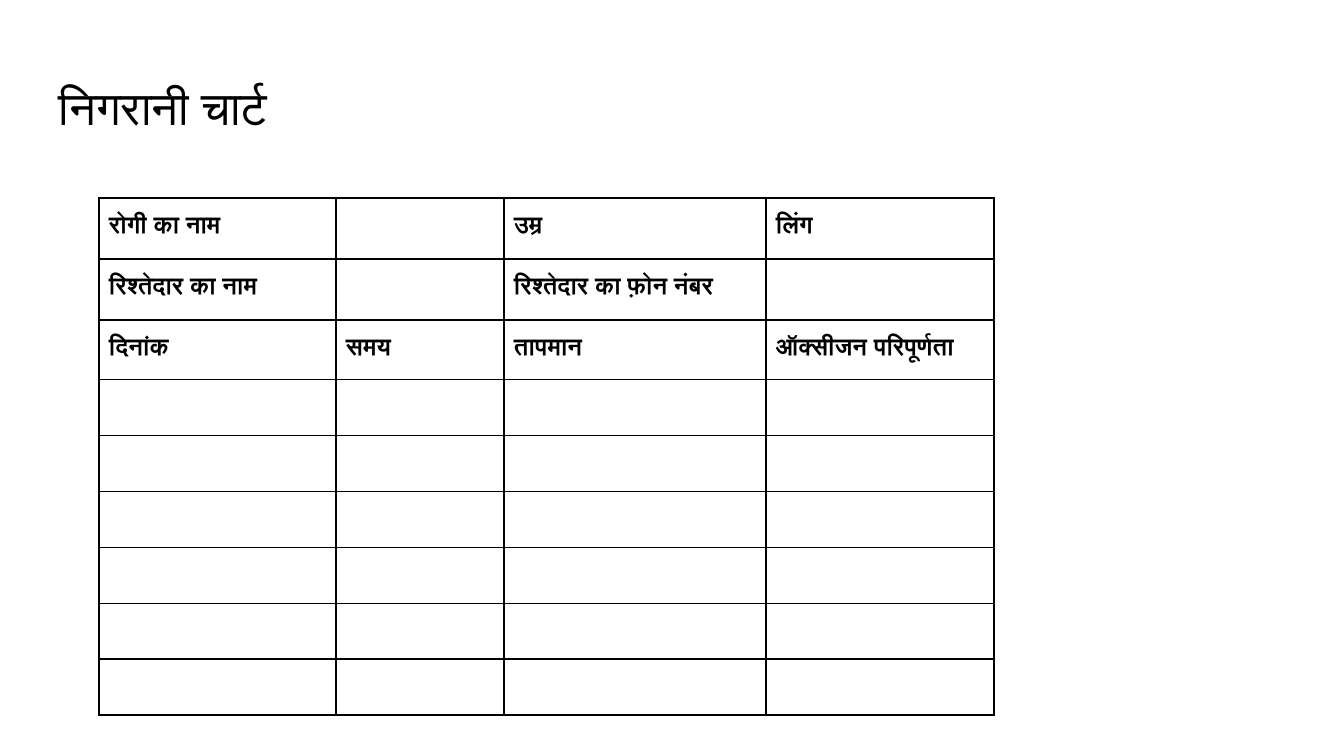
from dataclasses import dataclass

from lxml.etree import SubElement
from pptx import Presentation
from pptx.dml.color import RGBColor
from pptx.oxml.ns import qn
from pptx.util import Emu, Pt

EMU_PER_INCH, PX_PER_INCH = 914400, 134.4
BLACK = RGBColor(0x00, 0x00, 0x00)
BORDER_WIDTH = Pt(1)
SIDE_INSET, END_INSET = 10, 13


@dataclass(frozen=True)
class TextStyle:
    font: str
    size: float
    bold: bool = False
    line_spacing: float = 1.0


@dataclass(frozen=True)
class Grid:
    left: int
    top: int
    columns: tuple[int, ...]
    rows: tuple[int, ...]
    labels: tuple[tuple[str, ...], ...]


TITLE_STYLE = TextStyle("Arial", 25.2)
LABEL_STYLE = TextStyle("Calibri", 13, bold=True, line_spacing=1.15)
MONITORING_GRID = Grid(
    left=99,
    top=198,
    columns=(237, 168, 262, 228),
    rows=(61, 61, 55) + (56,) * 6,
    labels=(
        ("रोगी का नाम", "", "उम्र", "लिंग"),
        ("रिश्तेदार का नाम", "", "रिश्तेदार का फ़ोन नंबर", ""),
        ("दिनांक", "समय", "तापमान", "ऑक्सीजन परिपूर्णता"),
    ) + (("",) * 4,) * 6,
)


def px(length: int) -> Emu:
    return Emu(round(length * EMU_PER_INCH / PX_PER_INCH))


def write_text(frame, text: str, style: TextStyle) -> None:
    para = frame.paragraphs[0]
    para.text = text
    para.line_spacing = style.line_spacing
    para.font.name = style.font
    para.font.size = Pt(style.size)
    para.font.bold = style.bold
    para.font.color.rgb = BLACK


def add_title(page, text: str) -> None:
    box = page.shapes.add_textbox(px(46), px(66), px(1253), px(85))
    frame = box.text_frame
    frame.word_wrap = True
    frame.margin_left = frame.margin_right = px(END_INSET)
    frame.margin_top = frame.margin_bottom = px(END_INSET)
    write_text(frame, text, TITLE_STYLE)


def set_borders(cell) -> None:
    properties = cell._tc.get_or_add_tcPr()
    for side in ("L", "R", "T", "B"):
        line = SubElement(properties, qn(f"a:ln{side}"), w=str(BORDER_WIDTH))
        fill = SubElement(line, qn("a:solidFill"))
        SubElement(fill, qn("a:srgbClr"), val=str(BLACK))


def add_grid(page, grid: Grid) -> None:
    table = page.shapes.add_table(
        len(grid.rows), len(grid.columns), px(grid.left), px(grid.top),
        px(sum(grid.columns)), px(sum(grid.rows)),
    ).table
    table.first_row = table.horz_banding = False
    for column, width in zip(table.columns, grid.columns):
        column.width = px(width)
    for row, height, labels in zip(table.rows, grid.rows, grid.labels):
        row.height = px(height)
        for cell, label in zip(row.cells, labels):
            set_borders(cell)
            cell.fill.background()
            cell.margin_left = cell.margin_right = px(SIDE_INSET)
            # Blank cells need no end insets, so they never stretch a row.
            cell.margin_top = cell.margin_bottom = px(END_INSET if label else 0)
            if label:
                write_text(cell.text_frame, label, LABEL_STYLE)


def main() -> None:
    deck = Presentation()
    deck.slide_width, deck.slide_height = px(1344), px(756)
    page = deck.slides.add_slide(deck.slide_layouts[6])
    add_title(page, "निगरानी चार्ट")
    add_grid(page, MONITORING_GRID)
    deck.save("out.pptx")


if __name__ == "__main__":
    main()
